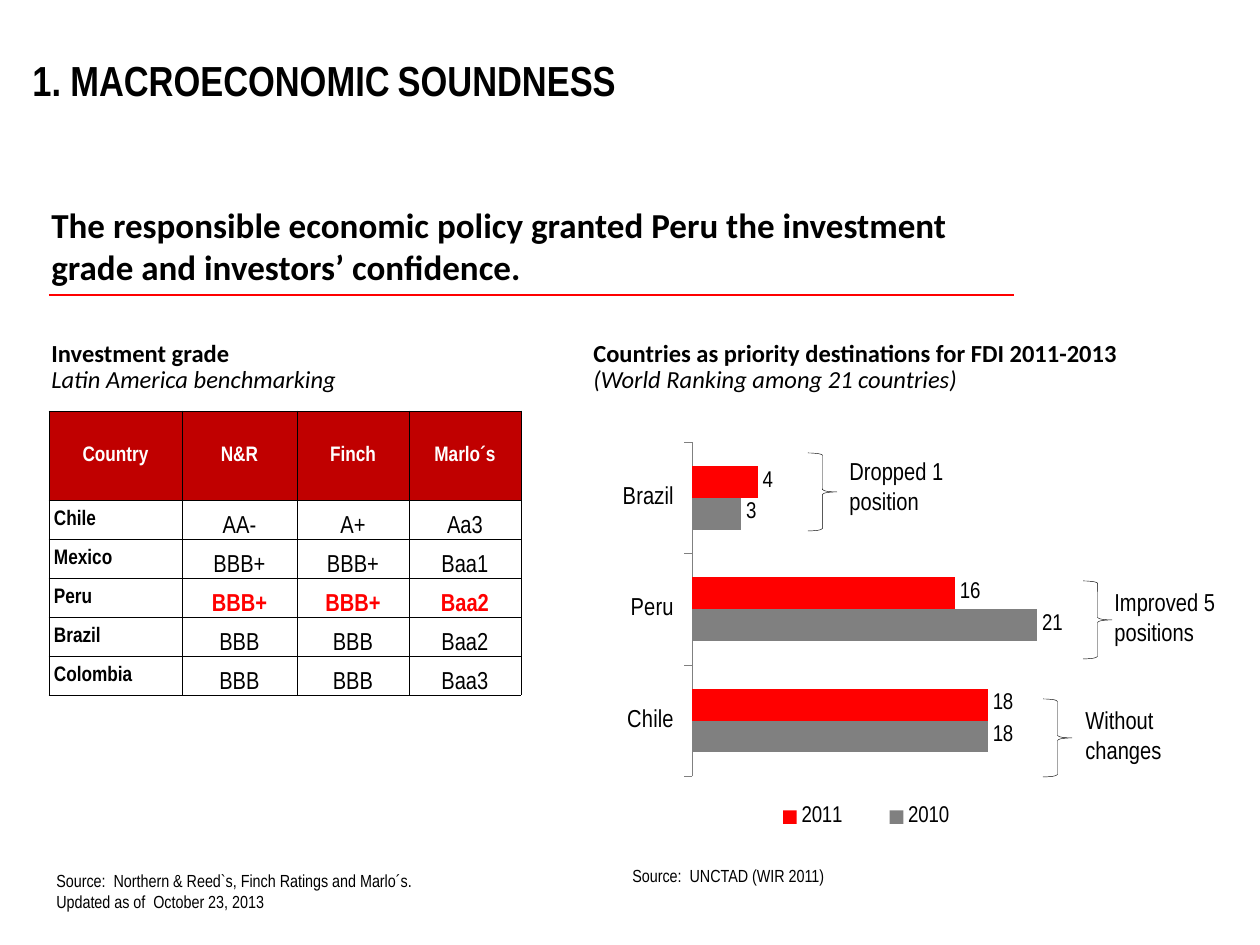
from dataclasses import dataclass

from lxml import etree
from pptx import Presentation
from pptx import util as u
from pptx.chart.data import CategoryChartData
from pptx.dml.color import RGBColor
from pptx.enum import chart as ch, shapes, text
from pptx.oxml import parse_xml
from pptx.oxml.ns import nsdecls, qn

PX = 914400 / 126
NARROW, CALIBRI = "Arial Narrow", "Calibri"
BLACK, WHITE, RED, DARK_RED, GREY = "000000", "FFFFFF", "FF0000", "C00000", "808080"


@dataclass
class Run:
    """A piece of text with one style."""
    words: str
    size: int
    font: str = NARROW
    color: str = BLACK
    bold: bool = False
    italic: bool = False


@dataclass
class Box:
    """A text box in px, with one list of runs for each paragraph."""
    x: int
    y: int
    w: int
    h: int
    paras: list[list[Run]]
    middle: bool = False
    wrap: bool = True
    spacing: float | None = None


@dataclass
class Note:
    """A brace beside a pair of bars and the remark it points to."""
    brace_x: int
    brace_y: int
    x: int
    y: int
    w: int
    words: str


def px(n: int) -> int:
    """Turn px into EMU."""
    return round(n * PX)


def rgb(color: str) -> RGBColor:
    """Turn a hex string into a colour."""
    return RGBColor.from_string(color)


def add_run(p, run: Run) -> None:
    """Append a styled run to a paragraph."""
    r = p.add_run()
    r.text = run.words
    f = r.font
    f.size, f.name, f.bold, f.italic = u.Pt(run.size), run.font, run.bold, run.italic
    f.color.rgb = rgb(run.color)


def draw_box(s, box: Box):
    """Draw a text box and return its text frame."""
    tf = s.shapes.add_textbox(px(box.x), px(box.y), px(box.w), px(box.h)).text_frame
    tf.word_wrap = box.wrap
    if box.middle:
        tf.vertical_anchor = text.MSO_ANCHOR.MIDDLE
    for i, runs in enumerate(box.paras):
        p = tf.add_paragraph() if i else tf.paragraphs[0]
        if box.spacing:
            p.line_spacing = box.spacing
        for run in runs:
            add_run(p, run)
    return tf


def draw_title(s) -> None:
    """Draw the numbered slide title."""
    tf = draw_box(s, Box(20, 31, 656, 97, [[
        Run("MACROECONOMIC", 24, bold=True), Run(" ", 20, CALIBRI, bold=True),
        Run("SOUNDNESS", 24, bold=True)]], middle=True))
    ppr = tf.paragraphs[0]._p.get_or_add_pPr()
    ppr.set("marL", str(px(38)))
    ppr.set("indent", str(px(-38)))
    etree.SubElement(ppr, qn("a:buFont")).set("typeface", NARROW)
    etree.SubElement(ppr, qn("a:buAutoNum")).set("type", "arabicPeriod")


def draw_heading(s, x: int, w: int, name: str, detail: str) -> None:
    """Draw a bold heading with an italic line under it."""
    draw_box(s, Box(x, 335, w, 66, [[Run(name, 14, CALIBRI, bold=True)],
                                    [Run(detail, 14, CALIBRI, italic=True)]], spacing=0.9))


def draw_rule(s) -> None:
    """Draw the red rule under the message."""
    line = s.shapes.add_connector(shapes.MSO_CONNECTOR.STRAIGHT, px(49), px(295), px(1014), px(295))
    line.line.color.rgb = rgb(RED)
    line.line.width = u.Pt(1.5)
    etree.SubElement(line._element.spPr, qn("a:effectLst"))


def draw_note(s, note: Note) -> None:
    """Draw a brace and its remark."""
    sp = s.shapes.add_shape(shapes.MSO_SHAPE.RIGHT_BRACE,
                            px(note.brace_x), px(note.brace_y), px(29), px(78))
    sp.shadow.inherit = False
    sp.fill.background()
    sp.line.color.rgb = rgb(BLACK)
    sp.line.width = u.Pt(0.25)
    draw_box(s, Box(note.x, note.y, note.w, 72, [[Run(note.words, 14)]]))


def draw_chart(s) -> None:
    """Draw the ranking bars for the two years."""
    data = CategoryChartData()
    data.categories = ["Chile ", "Peru ", "Brazil "]
    data.add_series("2010", (18, 21, 3))
    data.add_series("2011", (18, 16, 4))
    chart = s.shapes.add_chart(ch.XL_CHART_TYPE.BAR_CLUSTERED,
                               px(612), px(424), px(571), px(452), data).chart
    chart.has_title = False
    chart.font.size, chart.font.name = u.Pt(13), NARROW
    chart.font.color.rgb = rgb(BLACK)
    axis = chart.category_axis
    axis.major_tick_mark = ch.XL_TICK_MARK.OUTSIDE
    axis.tick_labels.font.size = u.Pt(14)
    axis.format.line.color.rgb = rgb(GREY)
    axis.format.line.width = u.Pt(0.25)
    values = chart.value_axis
    values.minimum_scale, values.maximum_scale = 0, 25
    values.has_major_gridlines = False
    values.visible = False
    plot = chart.plots[0]
    plot.gap_width, plot.overlap, plot.vary_by_categories = 150, 0, False
    for series, color in zip(plot.series, (GREY, RED)):
        series.format.fill.solid()
        series.format.fill.fore_color.rgb = rgb(color)
        series.data_labels.show_value = True
        series.data_labels.position = ch.XL_LABEL_POSITION.OUTSIDE_END
    chart.has_legend = True
    legend = chart.legend
    legend.position = ch.XL_LEGEND_POSITION.RIGHT
    legend.include_in_layout = False
    plot_area = chart._chartSpace.chart.plotArea
    for old in plot_area.findall(qn("c:layout")):
        plot_area.remove(old)
    plot_area.insert(0, layout(0.14, 0.04, 0.72, 0.74, inner=True))
    box = legend._element
    for old in box.findall(qn("c:layout")):
        box.remove(old)
    box.find(qn("c:legendPos")).addnext(layout(0.23, 0.83, 0.43, 0.08))


def layout(x: float, y: float, w: float, h: float, inner: bool = False):
    """Make a manual layout from shares of the chart."""
    target = '<c:layoutTarget val="inner"/>' if inner else ""
    sizes = "".join(f'<c:{k} val="{v}"/>' for k, v in zip("xywh", (x, y, w, h)))
    return parse_xml(f'<c:layout {nsdecls("c")}><c:manualLayout>{target}<c:xMode val="edge"/>'
                     f'<c:yMode val="edge"/>{sizes}</c:manualLayout></c:layout>')


def fill_cell(cell, run: Run, fill: str | None, anchor, centred: bool, left: int) -> None:
    """Write one bordered table cell."""
    cell.margin_left, cell.margin_right = px(left), px(1 if left else 0)
    cell.margin_top, cell.margin_bottom = px(1 if left else 0), 0
    cell.vertical_anchor = anchor
    p = cell.text_frame.paragraphs[0]
    p.alignment = text.PP_ALIGN.CENTER if centred else text.PP_ALIGN.LEFT
    add_run(p, run)
    tcpr = cell._tc.get_or_add_tcPr()
    for side in ("lnL", "lnR", "lnT", "lnB"):
        tcpr.append(parse_xml(f'<a:{side} {nsdecls("a")} w="6350"><a:solidFill>'
                              f'<a:srgbClr val="{BLACK}"/></a:solidFill></a:{side}>'))
    if fill:
        cell.fill.solid()
        cell.fill.fore_color.rgb = rgb(fill)
    else:
        cell.fill.background()


def draw_table(s) -> None:
    """Draw the table of credit ratings."""
    rows = [("Country", "N&R", "Finch", "Marlo´s"), ("Chile", "AA-", "A+", "Aa3"),
            ("Mexico", "BBB+", "BBB+", "Baa1"), ("Peru", "BBB+", "BBB+", "Baa2"),
            ("Brazil", "BBB", "BBB", "Baa2"), ("Colombia", "BBB", "BBB", "Baa3")]
    mid, low = text.MSO_ANCHOR.MIDDLE, text.MSO_ANCHOR.BOTTOM
    table = s.shapes.add_table(6, 4, px(49), px(411), px(472), px(284)).table
    for col, width in zip(table.columns, (133, 115, 112, 112)):
        col.width = px(width)
    for i, row in enumerate(rows):
        table.rows[i].height = px(39 if i else 89)
        peru = row[0] == "Peru"
        for j, words in enumerate(row):
            cell = table.cell(i, j)
            if i == 0:
                fill_cell(cell, Run(words, 12, color=WHITE, bold=True), DARK_RED, mid, True, 1)
            elif j == 0:
                fill_cell(cell, Run(words, 12, bold=True), None, mid, False, 5)
            else:
                run = Run(words, 14, color=RED if peru else BLACK, bold=peru)
                fill_cell(cell, run, None, low, True, 0)


def main() -> None:
    """Build the slide and save it."""
    prs = Presentation()
    prs.slide_width, prs.slide_height = px(1260), px(945)
    s = prs.slides.add_slide(prs.slide_layouts[6])
    draw_box(s, Box(44, 864, 406, 55, [
        [Run("Source:  Northern & Reed`s, Finch Ratings and Marlo´s.", 10)],
        [Run("Updated as of  October 23, 2013", 10)]], wrap=False))
    draw_title(s)
    draw_box(s, Box(39, 197, 994, 97, [[Run(
        "The responsible economic policy granted Peru the investment grade and investors’ confidence.",
        20, CALIBRI, bold=True)]], middle=True))
    draw_rule(s)
    draw_heading(s, 39, 452, "Investment grade", "Latin America benchmarking")
    draw_heading(s, 581, 552, "Countries as priority destinations for FDI 2011-2013",
                 "(World Ranking among 21 countries)")
    for note in (Note(808, 453, 837, 450, 158, "Dropped 1 position"),
                 Note(1083, 581, 1102, 581, 132, "Improved 5 positions"),
                 Note(1043, 699, 1073, 699, 129, "Without changes")):
        draw_note(s, note)
    draw_chart(s)
    draw_box(s, Box(620, 859, 220, 34, [[Run("Source:  UNCTAD (WIR 2011)", 10)]], wrap=False))
    draw_table(s)
    prs.save("out.pptx")


if __name__ == "__main__":
    main()
